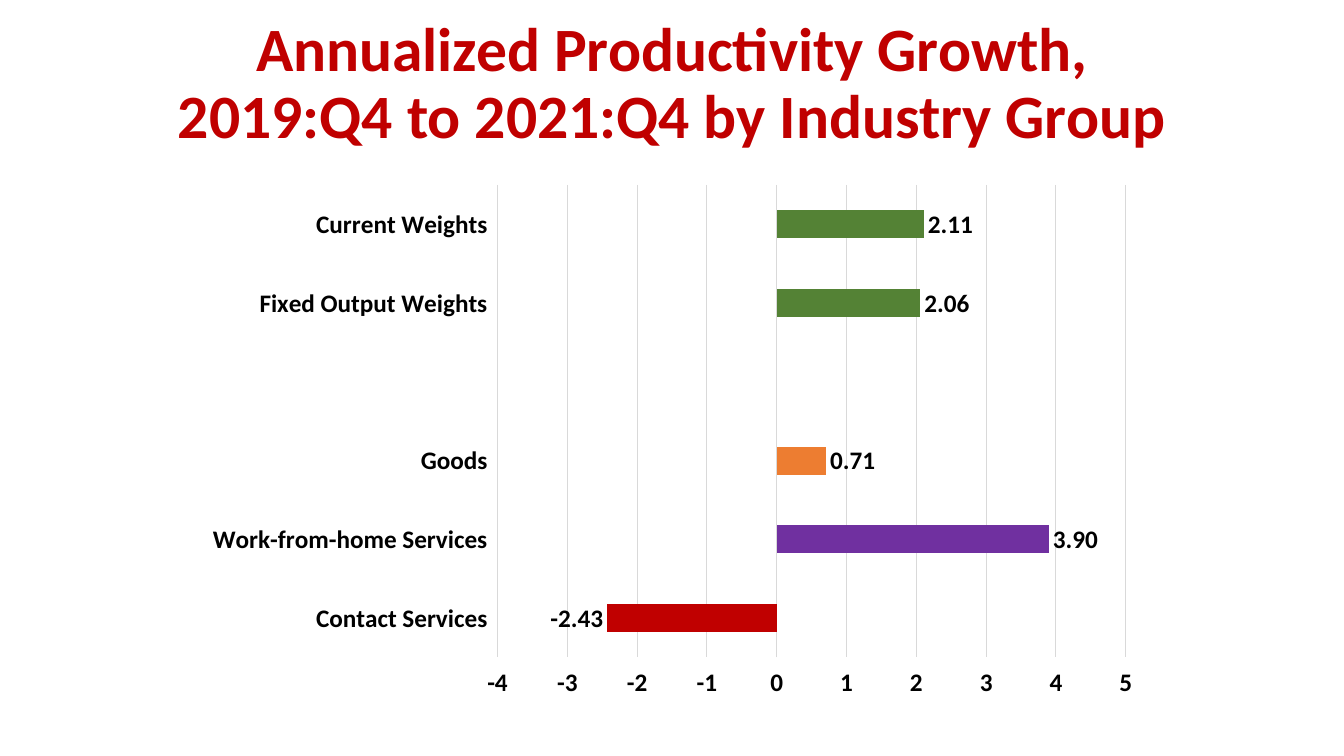
from dataclasses import dataclass

from pptx import Presentation
from pptx.chart.data import CategoryChartData
from pptx.dml.color import RGBColor
from pptx.enum import chart as ch, text
from pptx.util import Inches, Pt


@dataclass(frozen=True)
class Theme:
    font: str = "Calibri"
    red: str = "C00000"
    green: str = "548235"
    orange: str = "ED7D31"
    purple: str = "7030A0"
    black: str = "000000"
    grid: str = "D9D9D9"
    title_size: int = 44
    label_size: int = 18


theme = Theme()


def style_font(font, size, color):
    font.name = theme.font
    font.size = Pt(size)
    font.bold = True
    font.color.rgb = RGBColor.from_string(color)


def style_line(line):
    line.color.rgb = RGBColor.from_string(theme.grid)
    line.width = Pt(0.75)


deck = Presentation()
deck.slide_width, deck.slide_height = Inches(13.33), Inches(7.5)
page = deck.slides.add_slide(deck.slide_layouts[5])

# Title
title = page.shapes.title
title.left, title.top = Inches(0.92), Inches(0.12)
title.width, title.height = Inches(11.5), Inches(1.45)
frame = title.text_frame
frame.text = "Annualized Productivity Growth,\v2019:Q4 to 2021:Q4 by Industry Group"
frame.vertical_anchor = text.MSO_ANCHOR.MIDDLE
para = frame.paragraphs[0]
para.alignment = text.PP_ALIGN.CENTER
para.line_spacing = 0.9
style_font(para.font, theme.title_size, theme.red)

# Growth by industry group; the empty row separates totals from groups
growth = [
    ("Current Weights", 2.11, theme.green),
    ("Fixed Output Weights", 2.06, theme.green),
    ("", None, None),
    ("Goods", 0.71, theme.orange),
    ("Work-from-home Services", 3.9, theme.purple),
    ("Contact Services", -2.43, theme.red),
]
data = CategoryChartData()
data.categories = [name for name, _, _ in growth]
data.add_series("Series 1", [value for _, value, _ in growth])
chart = page.shapes.add_chart(
    ch.XL_CHART_TYPE.BAR_CLUSTERED,
    Inches(1.92), Inches(1.73), Inches(9.5), Inches(5.3), data,
).chart
chart.has_legend = False
chart.has_title = False
style_font(chart.font, theme.label_size, theme.black)

# Bars
plot = chart.plots[0]
plot.gap_width = 182
plot.vary_by_categories = False
bars = plot.series[0]
bars.invert_if_negative = False
for index, (_, _, color) in enumerate(growth):
    if color:
        fill = bars.points[index].format.fill
        fill.solid()
        fill.fore_color.rgb = RGBColor.from_string(color)

labels = bars.data_labels
labels.show_value = True
labels.position = ch.XL_LABEL_POSITION.OUTSIDE_END
labels.number_format = "0.00"
labels.number_format_is_linked = False
style_font(labels.font, theme.label_size, theme.black)

# Axes: rows run downwards, so the high end of the scale's labels is the bottom
groups, scale = chart.category_axis, chart.value_axis
for axis in (groups, scale):
    axis.major_tick_mark = axis.minor_tick_mark = ch.XL_TICK_MARK.NONE
    style_font(axis.tick_labels.font, theme.label_size, theme.black)

groups.reverse_order = True
groups.tick_label_position = ch.XL_TICK_LABEL_POSITION.LOW
groups.has_major_gridlines = False
style_line(groups.format.line)

scale.minimum_scale, scale.maximum_scale, scale.major_unit = -4, 5, 1
scale.tick_label_position = ch.XL_TICK_LABEL_POSITION.HIGH
scale.tick_labels.number_format = "0"
scale.tick_labels.number_format_is_linked = False
scale.format.line.fill.background()
scale.has_major_gridlines = True
style_line(scale.major_gridlines.format.line)

deck.save("out.pptx")
